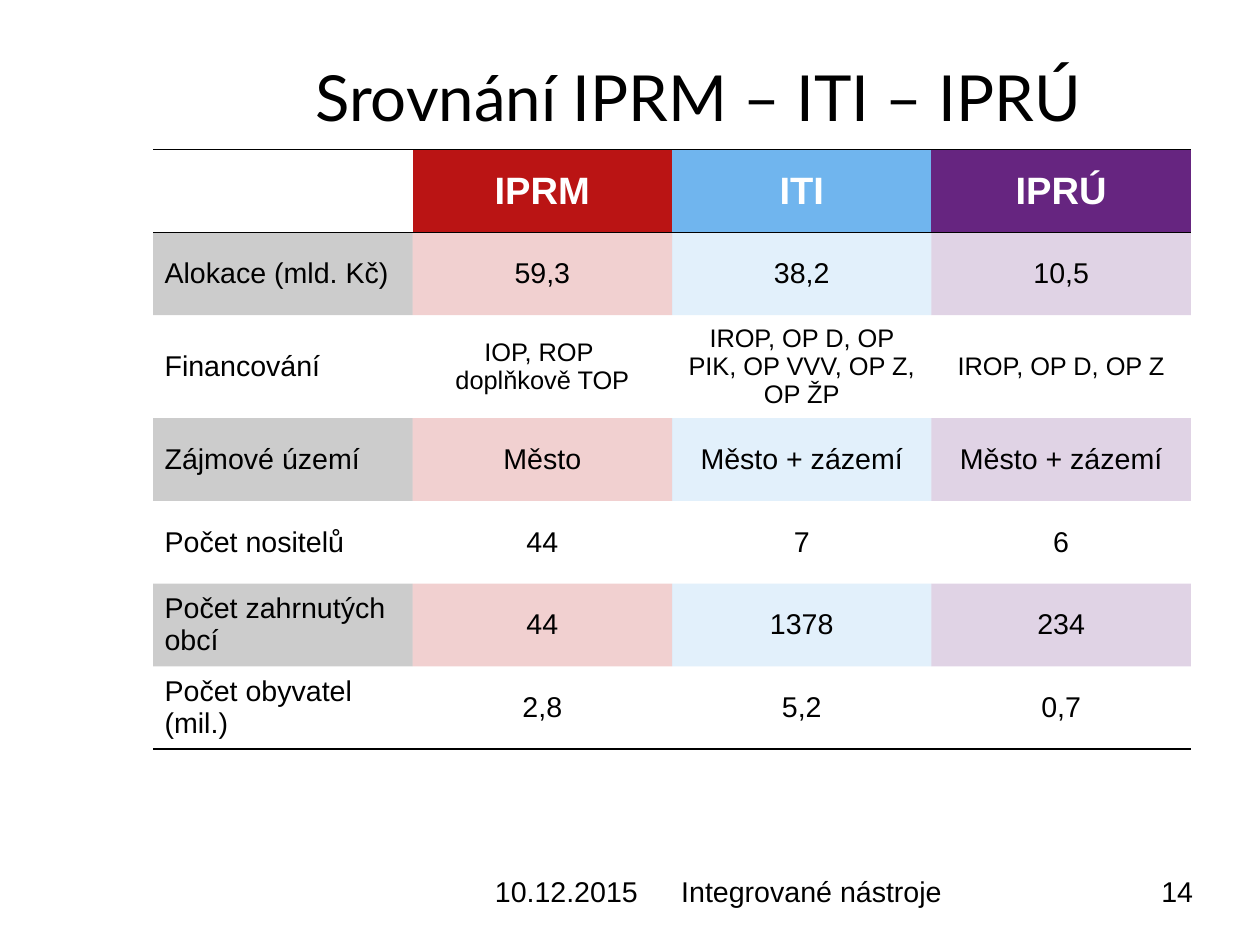
from dataclasses import dataclass

from pptx import Presentation
from pptx.dml.color import RGBColor
from pptx.enum.text import MSO_ANCHOR as Anchor, PP_ALIGN as Align
from pptx.oxml import parse_xml
from pptx.oxml.ns import nsdecls, qn
from pptx.slide import Slide
from pptx.table import Table, _Cell as Cell
from pptx.text.text import TextFrame
from pptx.util import Inches, Pt

BLACK = RGBColor(0x00, 0x00, 0x00)
WHITE = RGBColor(0xFF, 0xFF, 0xFF)
RED = RGBColor(0xBA, 0x14, 0x14)
BLUE = RGBColor(0x70, 0xB5, 0xEE)
PURPLE = RGBColor(0x66, 0x25, 0x80)

CM_PER_INCH = 2.54
SLIDE_WIDTH = Inches(28 / CM_PER_INCH)
SLIDE_HEIGHT = Inches(21 / CM_PER_INCH)

COLUMN_COLORS = (BLACK, RED, BLUE, PURPLE)
TABLE_WIDTH = Inches(9.08)
TABLE_HEIGHT = Inches(5.07)
TINT_OPACITY = 20
PLAIN_TABLE_STYLE = "{2D5ABB26-0587-4C30-8999-92F81FD0307C}"
FOOTER_TOP = 7.65


@dataclass
class Label:
    text: str
    left: float
    top: float
    width: float
    height: float
    size: int = 18
    font: str = "Arial"
    anchor: Anchor = Anchor.TOP
    spacing: float = 1.0


@dataclass
class Row:
    cells: tuple[str, ...]
    value_size: int = 18


LABELS = (
    Label("Srovnání IPRM – ITI – IPRÚ", 2.76, 0.26, 8.06, 1.24,
          size=40, font="Lato", anchor=Anchor.MIDDLE, spacing=0.93),
    Label("10.12.2015", 4.33, FOOTER_TOP, 2.56, 0.56),
    Label("Integrované nástroje", 5.96, FOOTER_TOP, 3.48, 0.56),
    Label("14", 10.16, FOOTER_TOP, 0.82, 0.56),
)

ROWS = (
    Row(("", "IPRM", "ITI", "IPRÚ"), value_size=24),
    Row(("Alokace (mld. Kč)", "59,3", "38,2", "10,5")),
    Row(("Financování", "IOP, ROP \vdoplňkově TOP",
         "IROP, OP D, OP PIK, OP VVV, OP Z, OP ŽP", "IROP, OP D, OP Z"),
        value_size=16),
    Row(("Zájmové území", "Město", "Město + zázemí", "Město + zázemí")),
    Row(("Počet nositelů", "44", "7", "6")),
    Row(("Počet zahrnutých obcí", "44", "1378", "234")),
    Row(("Počet obyvatel (mil.)", "2,8", "5,2", "0,7")),
)


def write_text(frame: TextFrame, text: str, *, size: int, font: str = "Arial",
               color: RGBColor = BLACK, bold: bool = False,
               align: Align = Align.LEFT, spacing: float = 1.0) -> None:
    paragraph = frame.paragraphs[0]
    paragraph.text = text
    paragraph.alignment = align
    paragraph.line_spacing = spacing
    for run in paragraph.runs:
        run.font.size = Pt(size)
        run.font.name = font
        run.font.bold = bold
        run.font.color.rgb = color


def add_label(slide: Slide, label: Label) -> None:
    box = slide.shapes.add_textbox(Inches(label.left), Inches(label.top),
                                   Inches(label.width), Inches(label.height))
    frame = box.text_frame
    frame.word_wrap = True
    frame.vertical_anchor = label.anchor
    frame.margin_left = frame.margin_right = 0
    frame.margin_top = frame.margin_bottom = 0
    write_text(frame, label.text, size=label.size, font=label.font,
               spacing=label.spacing)


def add_border(cell: Cell, side: str) -> None:
    """Draw a black line on one side of the cell: T for top, B for bottom."""
    cell._tc.get_or_add_tcPr().append(parse_xml(
        f'<a:ln{side} {nsdecls("a")} w="{Pt(1)}"><a:solidFill>'
        f'<a:srgbClr val="{BLACK}"/></a:solidFill></a:ln{side}>'))


def fill_cell(cell: Cell, color: RGBColor, opacity: int = 100) -> None:
    cell.fill.solid()
    cell.fill.fore_color.rgb = color
    if opacity < 100:
        color_element = cell._tc.tcPr.find(qn("a:solidFill")).find(qn("a:srgbClr"))
        color_element.append(parse_xml(
            f'<a:alpha {nsdecls("a")} val="{opacity * 1000}"/>'))


def format_cell(table: Table, row_index: int, column_index: int) -> None:
    row = ROWS[row_index]
    cell = table.cell(row_index, column_index)
    is_header = row_index == 0
    is_row_name = column_index == 0

    cell.vertical_anchor = Anchor.MIDDLE
    write_text(cell.text_frame, row.cells[column_index],
               size=18 if is_row_name else row.value_size,
               color=WHITE if is_header else BLACK, bold=is_header,
               align=Align.LEFT if is_row_name else Align.CENTER)

    if is_header:
        add_border(cell, "T")
    if row_index in (0, len(ROWS) - 1):
        add_border(cell, "B")

    if is_header and not is_row_name:
        fill_cell(cell, COLUMN_COLORS[column_index])
    elif row_index % 2:
        fill_cell(cell, COLUMN_COLORS[column_index], TINT_OPACITY)
    else:
        cell.fill.background()


def add_comparison_table(slide: Slide) -> None:
    column_count = len(COLUMN_COLORS)
    frame = slide.shapes.add_table(len(ROWS), column_count, Inches(1.34),
                                   Inches(1.31), TABLE_WIDTH, TABLE_HEIGHT)
    table = frame.table
    table.horz_banding = False
    table._tbl.tblPr.find(qn("a:tableStyleId")).text = PLAIN_TABLE_STYLE
    for row_index in range(len(ROWS)):
        for column_index in range(column_count):
            format_cell(table, row_index, column_index)


def main() -> None:
    presentation = Presentation()
    presentation.slide_width = SLIDE_WIDTH
    presentation.slide_height = SLIDE_HEIGHT
    # The default template marks its size as a 4:3 screen show.
    presentation.element.find(qn("p:sldSz")).attrib.pop("type", None)
    slide = presentation.slides.add_slide(presentation.slide_layouts[6])
    for label in LABELS:
        add_label(slide, label)
    add_comparison_table(slide)
    presentation.save("out.pptx")


if __name__ == "__main__":
    main()
